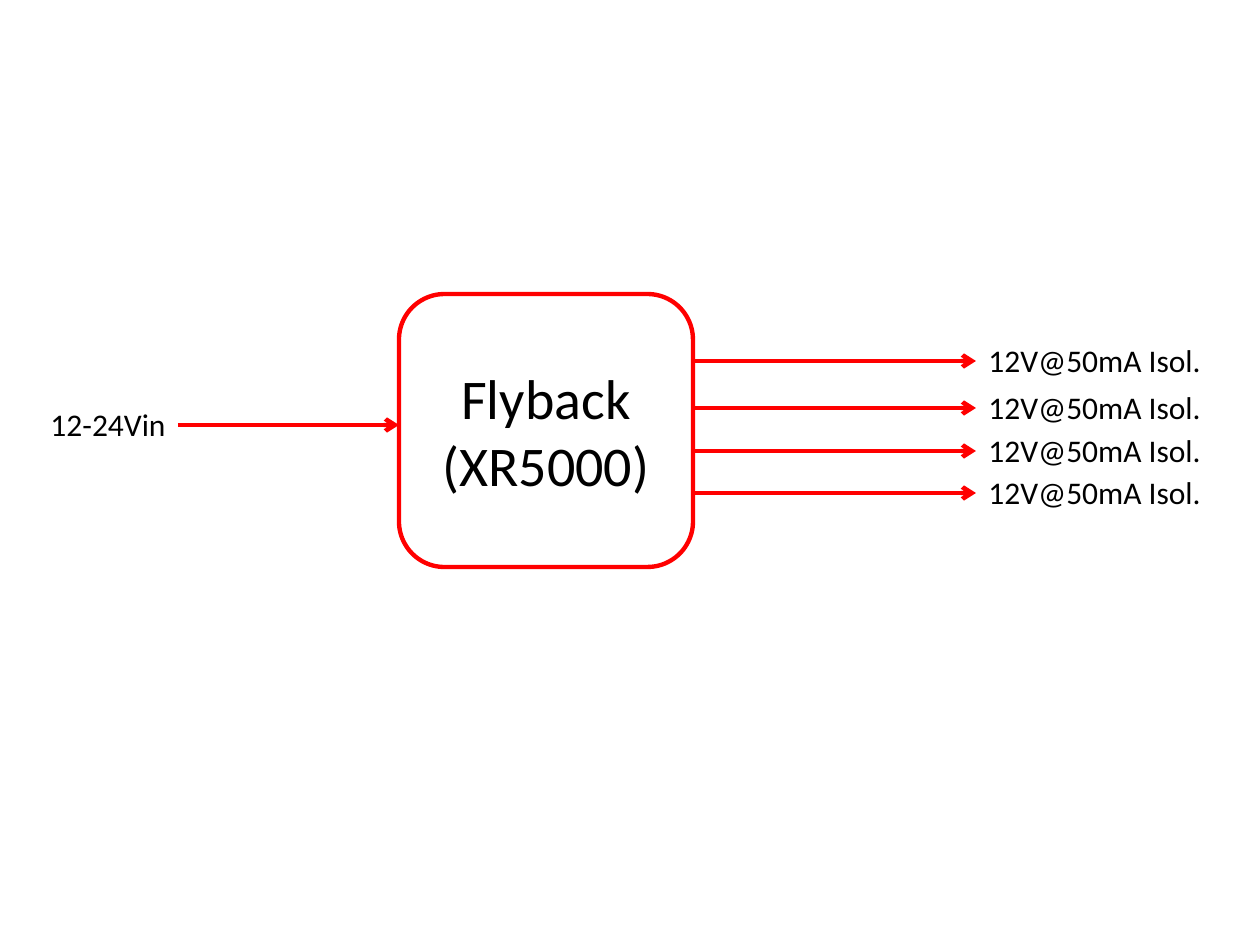
from lxml import etree
from pptx import Presentation, util as u
from pptx.dml.color import RGBColor
from pptx.enum import shapes, text
from pptx.oxml.ns import qn

PX = 914400 // 126
COLORS = {"line": "FF0000", "text": "000000"}
LINE_WIDTH = u.Pt(2.5)

prs = Presentation()
prs.slide_width, prs.slide_height = u.Inches(10), u.Inches(7.5)
s = prs.slides.add_slide(prs.slide_layouts[6])


def write(p, words, size, align):
    p.text = words
    p.alignment = align
    p.font.name = "Calibri"
    p.font.size = u.Pt(size)
    p.font.color.rgb = RGBColor.from_string(COLORS["text"])


# Converter block
box_left, box_top, box_width, box_height = 399, 294, 294, 273
box_right = box_left + box_width
sp = s.shapes.add_shape(shapes.MSO_SHAPE.ROUNDED_RECTANGLE, box_left * PX,
                        box_top * PX, box_width * PX, box_height * PX)
sp.shadow.inherit = False
sp.fill.background()
sp.line.color.rgb = RGBColor.from_string(COLORS["line"])
sp.line.width = LINE_WIDTH
tf = sp.text_frame
tf.vertical_anchor = text.MSO_ANCHOR.MIDDLE
write(tf.paragraphs[0], "Flyback", 32, text.PP_ALIGN.CENTER)
write(tf.add_paragraph(), "(XR5000)", 32, text.PP_ALIGN.CENTER)

# Input and outputs: arrow start, arrow end, y, label, label left, width, alignment
label_height, label_rise = 51, 26
input_left, input_end, output_end = 21, 178, 976
ports = [(input_end, box_left, 425, "12-24Vin",
          input_left, input_end - input_left, text.PP_ALIGN.RIGHT)]
for y in (361, 408, 451, 493):
    ports.append((box_right, output_end, y, "12V@50mA Isol.",
                  output_end, 273, text.PP_ALIGN.LEFT))

for start, end, y, label, left, width, align in ports:
    # Arrow
    cx = s.shapes.add_connector(shapes.MSO_CONNECTOR.STRAIGHT,
                                start * PX, y * PX, end * PX, y * PX)
    cx.line.color.rgb = RGBColor.from_string(COLORS["line"])
    cx.line.width = LINE_WIDTH
    etree.SubElement(cx.line._get_or_add_ln(), qn("a:tailEnd"), type="arrow")
    etree.SubElement(cx._element.spPr, qn("a:effectLst"))

    # Label
    tb = s.shapes.add_textbox(left * PX, (y - label_rise) * PX,
                              width * PX, label_height * PX)
    tb.text_frame.word_wrap = True
    tb.text_frame.auto_size = text.MSO_AUTO_SIZE.SHAPE_TO_FIT_TEXT
    write(tb.text_frame.paragraphs[0], label, 18, align)

prs.save("out.pptx")
